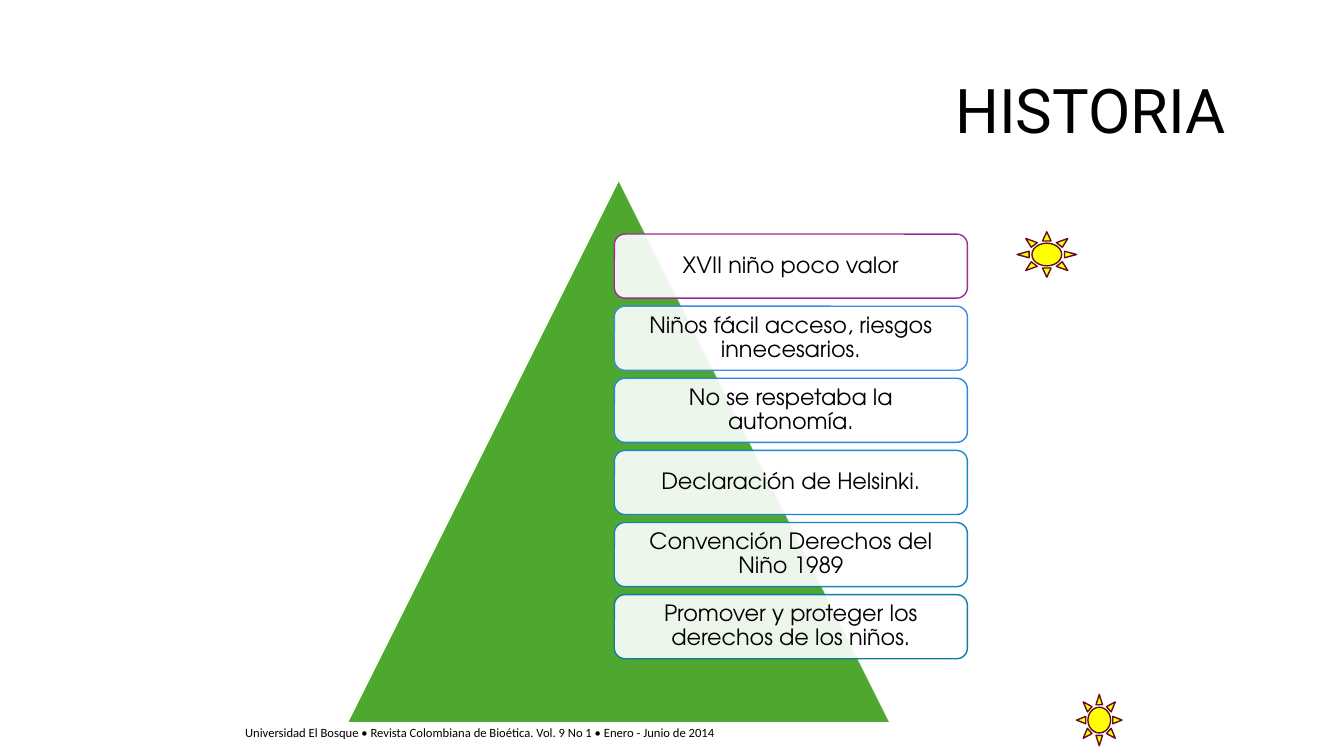
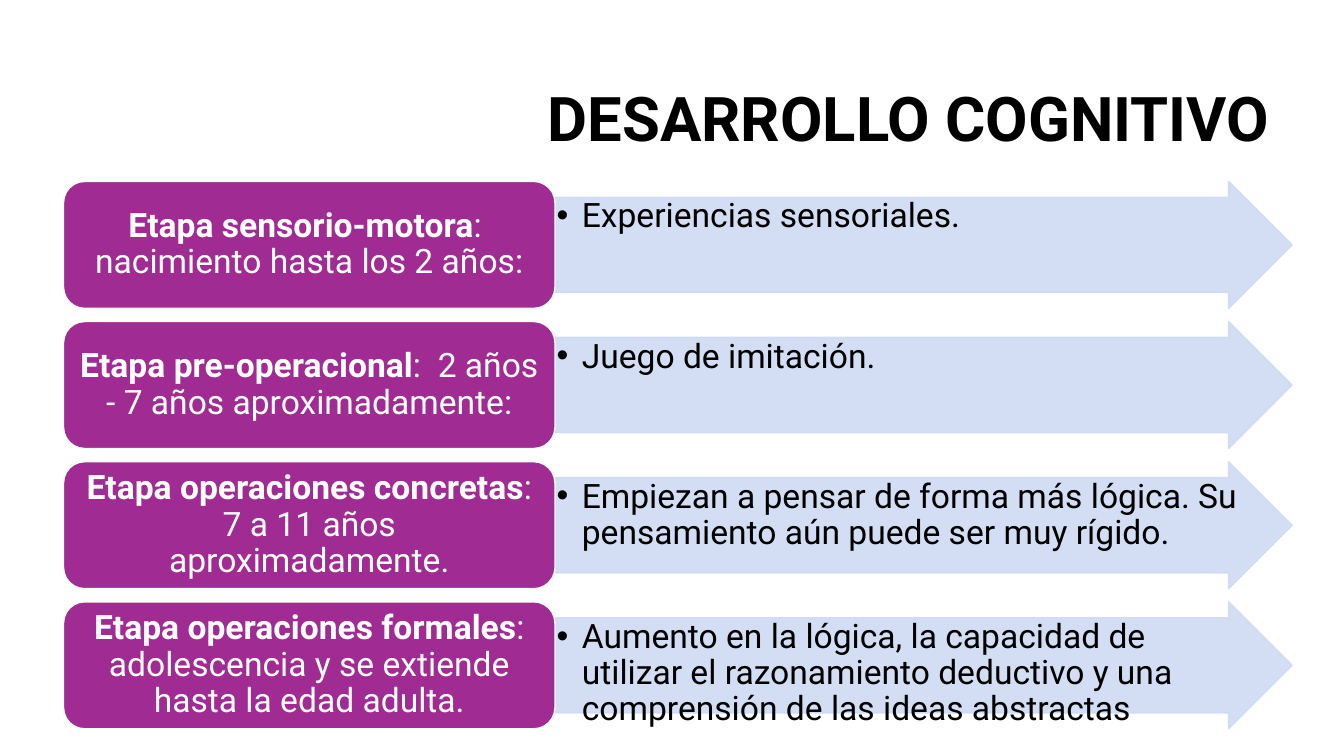
from collections import namedtuple

from lxml.etree import SubElement
from pptx import Presentation
from pptx.dml.color import RGBColor
from pptx.enum.shapes import MSO_SHAPE
from pptx.enum.text import MSO_ANCHOR, PP_ALIGN
from pptx.oxml.ns import qn
from pptx.util import Pt

Box = namedtuple("Box", "left top width height")

BLACK, WHITE = "000000", "FFFFFF"
GREEN, PURPLE, PALE_BLUE = "4EA72E", "A02B93", "CFDBF3"
SUN_YELLOW, SUN_EDGE = "FFFF00", "600E20"
SLIDE_FONT, CARD_FONT, FOOTER_FONT = "Roboto", "TeX Gyre Adventor", "Calibri"
SEE_THROUGH = 90

CENTRED = {"alignment": PP_ALIGN.CENTER, "line_spacing": 0.9}
RIGHT = {"alignment": PP_ALIGN.RIGHT, "line_spacing": 0.9}
LEFT = {"alignment": PP_ALIGN.LEFT, "line_spacing": 0.9}
SINGLE = {"alignment": PP_ALIGN.LEFT, "line_spacing": 1.0}

CARDS = [
    ("XVII niño poco valor", PURPLE),
    ("Niños fácil acceso, riesgos innecesarios.", "3F89DF"),
    ("No se respetaba la autonomía.", "2687DE"),
    ("Declaración de Helsinki.", "1C86CD"),
    ("Convención Derechos del Niño 1989", "1781B8"),
    ("Promover y proteger los derechos de los niños.", "127BA2"),
]
STAGES = [
    ("Etapa sensorio-motora", ":  nacimiento hasta los 2 años:",
     "Experiencias sensoriales."),
    ("Etapa pre-operacional", ":  2 años - 7 años aproximadamente:",
     "Juego de imitación."),
    ("Etapa operaciones concretas", ": 7 a 11 años aproximadamente.",
     "Empiezan a pensar de forma más lógica. Su pensamiento aún puede ser "
     "muy rígido."),
    ("Etapa operaciones formales",
     ": adolescencia y se extiende hasta la edad adulta.",
     "Aumento en la lógica, la capacidad de utilizar el razonamiento "
     "deductivo y una comprensión de las ideas abstractas"),
]


def colour(hex_text):
    return RGBColor.from_string(hex_text)


def set_all(target, values):
    for name, value in values.items():
        setattr(target, name, value)


def in_points(box):
    return [Pt(round(length, 2)) for length in box]


def set_opacity(fill_format, percent):
    """Add an alpha value to a solid fill, of a shape or of its line."""
    solid = fill_format._xPr.find(qn("a:solidFill"))
    SubElement(solid[0], qn("a:alpha")).set("val", str(percent * 1000))


def add_outlined(page, kind, box, fill, line, adjustments=()):
    shape = page.shapes.add_shape(kind, *in_points(box))
    shape.shadow.inherit = False
    shape.fill.solid()
    shape.fill.fore_color.rgb = colour(fill)
    shape.line.color.rgb = colour(line)
    shape.line.width = Pt(1)
    for index, value in enumerate(adjustments):
        shape.adjustments[index] = value
    return shape


def write(shape, spans, font, size, ink, layout, inset=(7.2, 3.6),
          anchor=MSO_ANCHOR.MIDDLE):
    """Fill a shape with one paragraph made of (text, bold) spans."""
    frame = shape.text_frame
    across, down = (Pt(length) for length in inset)
    set_all(frame, {"word_wrap": True, "vertical_anchor": anchor,
                    "margin_left": across, "margin_right": across,
                    "margin_top": down, "margin_bottom": down})
    para = frame.paragraphs[0]
    set_all(para, layout)
    for text, bold in spans:
        span = para.add_run()
        span.text = text
        set_all(span.font, {"name": font, "size": Pt(size), "bold": bold})
        span.font.color.rgb = colour(ink)
    return para


def add_bullet(para, indent):
    properties = para._p.get_or_add_pPr()
    properties.set("marL", str(Pt(indent)))
    properties.set("indent", str(-Pt(indent)))
    bullet_colour = SubElement(properties, qn("a:buClr"))
    SubElement(bullet_colour, qn("a:srgbClr")).set("val", BLACK)
    SubElement(properties, qn("a:buFont")).set("typeface", "Arial")
    SubElement(properties, qn("a:buChar")).set("char", "•")


def add_title(page, box, text, bold):
    title = page.shapes.add_textbox(*in_points(box))
    write(title, [(text, bold)], SLIDE_FONT, 44, BLACK, RIGHT)


def add_footer(page, box, text):
    footer = page.shapes.add_textbox(*in_points(box))
    write(footer, [(text, False)], FOOTER_FONT, 9, BLACK, SINGLE,
          anchor=MSO_ANCHOR.TOP)


def add_pyramid(page, box):
    """Triangle with a column of cards from its axis out to the right."""
    add_outlined(page, MSO_SHAPE.ISOSCELES_TRIANGLE, box, GREEN, WHITE)
    height = box.height * 0.118
    pitch = height * 9 / 8
    left = box.left + box.width / 2 - 3.2
    top = box.top + box.height * 0.1
    for row, (text, edge) in enumerate(CARDS):
        place = Box(left, top + row * pitch, box.width * 0.65, height)
        card = add_outlined(page, MSO_SHAPE.ROUNDED_RECTANGLE, place,
                            WHITE, edge, [0.167])
        set_opacity(card.fill, SEE_THROUGH)
        write(card, [(text, False)], CARD_FONT, 16, BLACK, CENTRED, (4.8, 4.8))


def add_sun(page, box):
    add_outlined(page, MSO_SHAPE.SUN, box, SUN_YELLOW, SUN_EDGE, [0.25])


def add_stage(page, box, name, age, detail):
    """Label on the left two fifths of the box, arrow on the rest."""
    label_width = box.width * 0.4
    arrow_box = box._replace(left=box.left + label_width,
                             width=box.width - label_width)
    arrow = add_outlined(page, MSO_SHAPE.RIGHT_ARROW, arrow_box,
                         PALE_BLUE, PALE_BLUE, [0.75, 0.5])
    for fill_format in (arrow.fill, arrow.line.fill):
        set_opacity(fill_format, SEE_THROUGH)
    para = write(arrow, [(detail, False)], SLIDE_FONT, 24, BLACK, LEFT,
                 (1.2, 1.2), MSO_ANCHOR.TOP)
    add_bullet(para, 18)
    label = add_outlined(page, MSO_SHAPE.ROUNDED_RECTANGLE,
                         box._replace(width=label_width), PURPLE, WHITE, [0.167])
    write(label, [(name, True), (age, False)], SLIDE_FONT, 24, WHITE, CENTRED)


def add_stages(page, box):
    gap = 9.4
    height = (box.height - gap * (len(STAGES) - 1)) / len(STAGES)
    for row, stage in enumerate(STAGES):
        top = box.top + row * (height + gap)
        add_stage(page, box._replace(top=top, height=height), *stage)


def build_history(page):
    add_title(page, Box(66, 28.8, 828, 104.4), "HISTORIA ", False)
    add_pyramid(page, Box(248, 128.4, 388, 388))
    add_footer(page, Box(168, 514, 567, 18),
               "Universidad El Bosque • Revista Colombiana de Bioética. "
               "Vol. 9 No 1 • Enero - Junio de 2014")
    add_sun(page, Box(726.5, 165.6, 42.5, 32.4))
    add_sun(page, Box(769, 496, 32.4, 36.7))


def build_development(page):
    add_title(page, Box(236, 36, 678.4, 101.5), "DESARROLLO COGNITIVO", True)
    add_stages(page, Box(45.4, 129.6, 877.6, 391))


def main():
    deck = Presentation()
    set_all(deck, {"slide_width": Pt(960), "slide_height": Pt(540)})
    for build in (build_history, build_development):
        build(deck.slides.add_slide(deck.slide_layouts[6]))
    deck.save("out.pptx")


if __name__ == "__main__":
    main()
